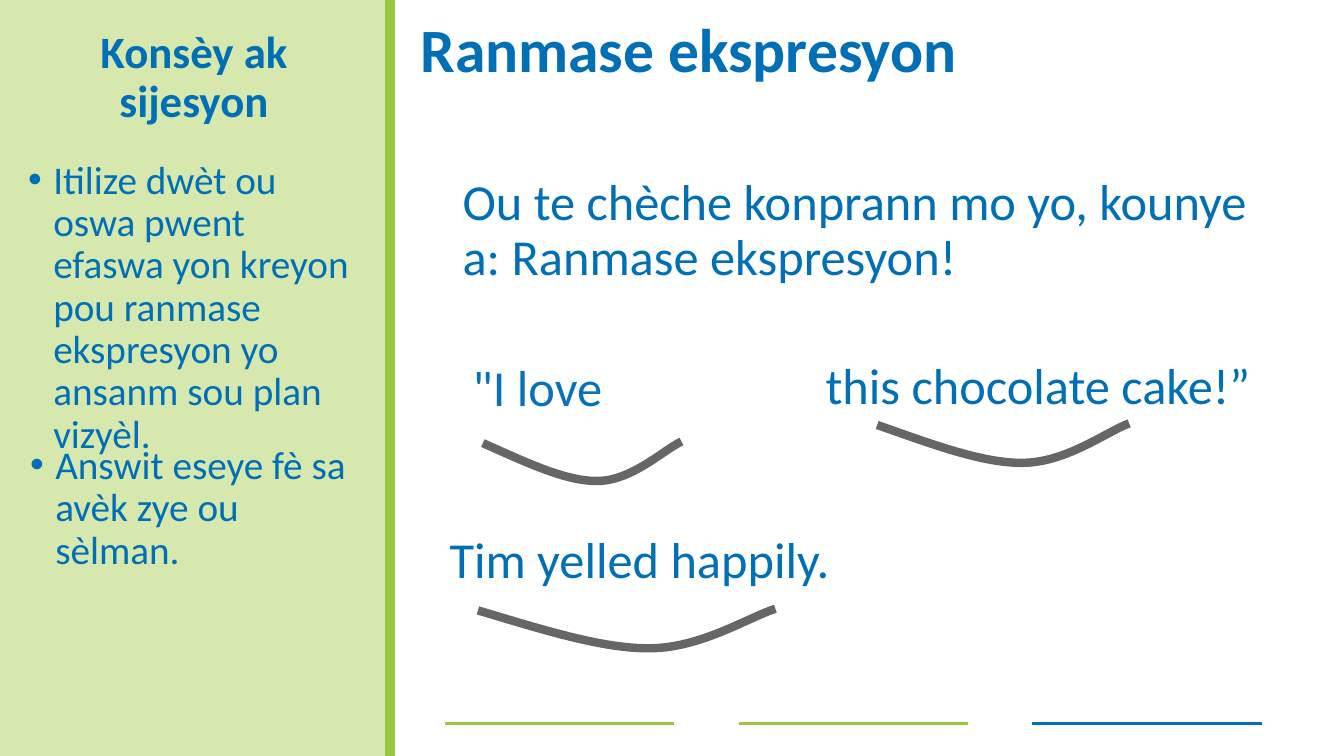
from lxml.etree import SubElement
from pptx import Presentation
from pptx.dml.color import RGBColor
from pptx.enum.shapes import MSO_CONNECTOR, MSO_SHAPE
from pptx.enum.text import MSO_ANCHOR, MSO_AUTO_SIZE, PP_ALIGN
from pptx.oxml.ns import qn
from pptx.util import Inches, Pt

WIDE, HIGH = Inches(13.33), Inches(7.5)
BLUE, GREEN, PALE, GREY = "006FB6", "96C93F", "D7E8AF", "666666"
EDGE = 29.03  # right edge of the side panel

# Scoop outline as shares of its box: a start, then two cubic curves
SCOOP = [(0, 0.04), (0.21, 0.5), (0.42, 1), (0.58, 0.98),
         (0.75, 0.97), (0.91, 0.21), (1, 0)]


def across(share):
    """Percent of the slide's width."""
    return round(WIDE * share / 100)


def down(share):
    """Percent of the slide's height."""
    return round(HIGH * share / 100)


def paint(target, color):
    target.rgb = RGBColor.from_string(color)


def write(shape, text, size, color=BLUE, bold=False, align=PP_ALIGN.LEFT,
          bullet=False, indent=(0, 0), top=0.05, left=0.1):
    frame = shape.text_frame
    frame.text = text
    frame.word_wrap = True
    frame.auto_size = MSO_AUTO_SIZE.NONE
    frame.vertical_anchor = MSO_ANCHOR.TOP
    frame.margin_left, frame.margin_top = Inches(left), Inches(top)
    para = frame.paragraphs[0]
    para.alignment, para.line_spacing = align, 0.9
    props = para._p.get_or_add_pPr()
    margin, hang = (0.25, -0.25) if bullet else indent
    props.set("marL", str(Inches(margin)))
    props.set("indent", str(Inches(hang)))
    if bullet:
        tint = SubElement(props, qn("a:buClr"))
        SubElement(tint, qn("a:srgbClr")).set("val", color)
        SubElement(props, qn("a:buFont")).set("typeface", "Arial")
        SubElement(props, qn("a:buChar")).set("char", "•")
    font = para.runs[0].font
    font.name, font.size, font.bold = "Calibri", Pt(size), bold
    paint(font.color, color)


def label(slide, x, y, w, h, text, size, **style):
    box = slide.shapes.add_textbox(across(x), down(y), across(w), down(h))
    write(box, text, size, **style)


def rule(slide, x1, y1, x2, y2, color, width):
    line = slide.shapes.add_connector(
        MSO_CONNECTOR.STRAIGHT, across(x1), down(y1), across(x2), down(y2))
    paint(line.line.color, color)
    line.line.width = Pt(width)
    SubElement(line._element.spPr, qn("a:effectLst"))


def scoop(slide, x, y, w, h=5.33):
    points = [(across(x + w * px), down(y + h * py)) for px, py in SCOOP]
    build = slide.shapes.build_freeform(*points[0])
    build.add_line_segments(points[1:], close=False)
    shape = build.convert_to_shape()
    # Join each three segments into one cubic curve
    outline = shape._element.find(".//" + qn("a:path"))
    steps = outline.findall(qn("a:lnTo"))
    for start in range(0, len(steps), 3):
        curve = SubElement(outline, qn("a:cubicBezTo"))
        for step in steps[start:start + 3]:
            curve.append(step[0])
            outline.remove(step)
    shape.shadow.inherit = False
    shape.fill.background()
    paint(shape.line.color, GREY)
    shape.line.width = Pt(6)


def panel(slide):
    side = slide.shapes.add_shape(
        MSO_SHAPE.RECTANGLE, 0, 0, across(EDGE), HIGH)
    side.shadow.inherit = False
    side.fill.solid()
    paint(side.fill.fore_color, PALE)
    side.line.fill.background()
    rule(slide, EDGE, 0, EDGE, 100, GREEN, 7)


def main():
    deck = Presentation()
    deck.slide_width, deck.slide_height = WIDE, HIGH
    slide = deck.slides.add_slide(deck.slide_layouts[5])

    # Side panel and footer rules
    panel(slide)
    for i, color in enumerate((GREEN, GREEN, BLUE)):
        x = 33.08 + 21.87 * i
        rule(slide, x, 95.73, x + 17.06, 95.73, color, 2)

    # Title
    title = slide.shapes.title
    title.left, title.top = across(EDGE), 0
    title.width, title.height = across(46.66), down(22.93)
    write(title, "Ranmase ekspresyon", 44, bold=True, top=0.19, left=0.3)

    # Advice in the side panel
    label(slide, 1.35, 3.33, 26.18, 12.67, "Konsèy ak sijesyon", 32,
          bold=True, align=PP_ALIGN.CENTER)
    label(slide, 1.35, 20.53, 26.03, 32.93,
          "Itilize dwèt ou oswa pwent efaswa yon kreyon pou ranmase "
          "ekspresyon yo ansanm sou plan vizyèl.", 28, bullet=True)
    label(slide, 1.5, 58.27, 26.03, 32.93,
          "Answit eseye fè sa avèk zye ou sèlman.", 28, bullet=True)

    # Phrases to scoop
    label(slide, 33.68, 22.8, 61.89, 13.07,
          "Ou te chèche konprann mo yo, kounye a: Ranmase ekspresyon!", 36)
    label(slide, 32.56, 47.33, 28.13, 13.07, '"I love', 36,
          color="0771BA", indent=(0.26, -0.01))
    label(slide, 60.69, 47.07, 38.48, 13.07, "this chocolate cake!”", 36)
    label(slide, 32.71, 70.13, 30.91, 13.07, "Tim yelled happily.", 36)

    # Scoops under the phrases
    scoop(slide, 35.93, 58.4, 14.78)
    scoop(slide, 65.27, 56, 18.75)
    scoop(slide, 35.56, 80.53, 22.13)

    deck.save("out.pptx")


if __name__ == "__main__":
    main()
